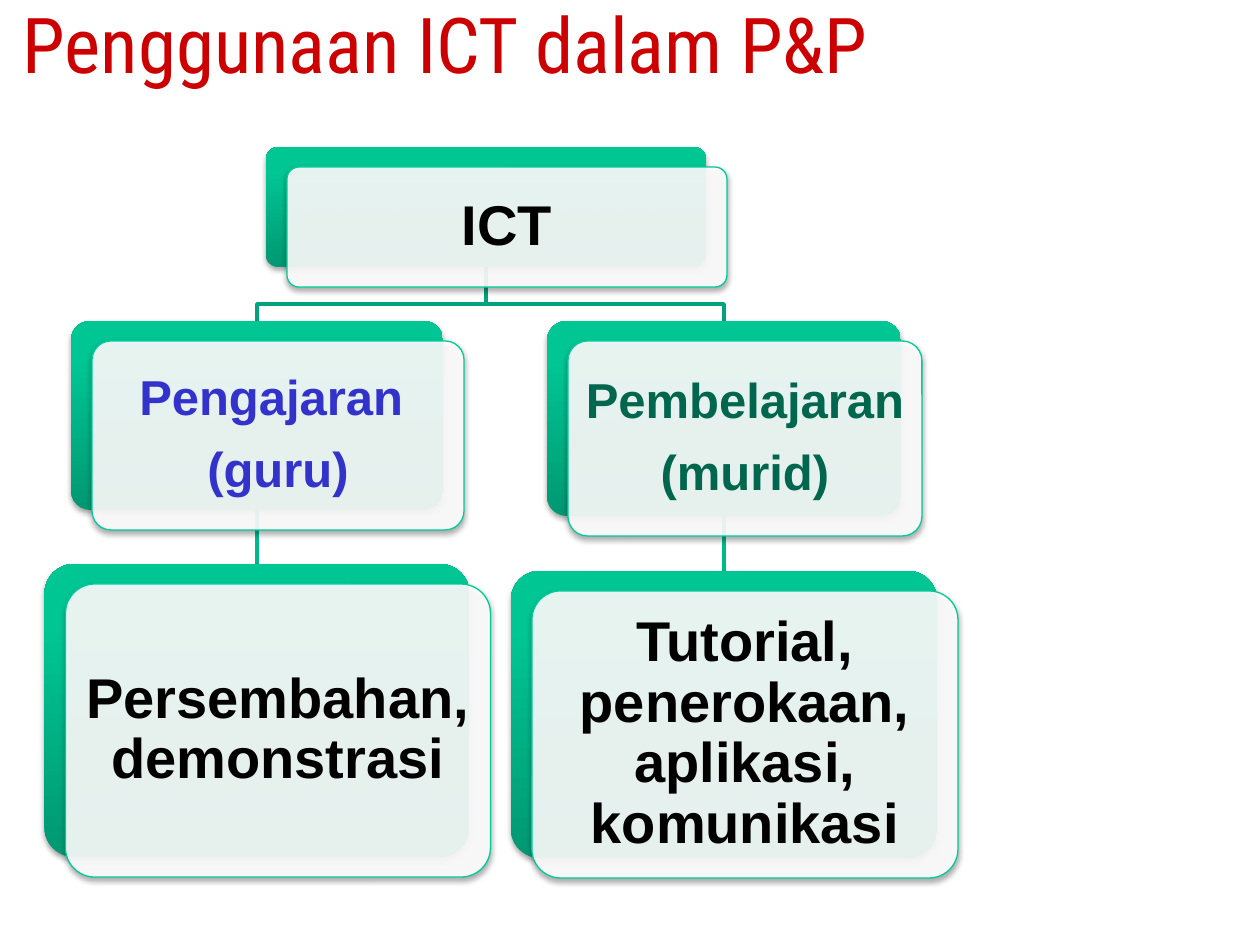
import dataclasses

import pptx
import pptx.dml.color
import pptx.enum.shapes
import pptx.enum.text
import pptx.oxml
import pptx.oxml.ns
import pptx.util

PX = 914400 / 126  # EMU in one px
CARD_SHIFT = (21, 20)  # front card relative to its back card
TOP, BOTTOM = 0, 2  # connection sites of a card


@dataclasses.dataclass(frozen=True)
class Theme:
    title_font: str = "Roboto Condensed"
    body_font: str = "Arial"
    title_size: int = 44
    large: int = 32
    medium: int = 28
    title: str = "CC0000"
    black: str = "000000"
    teacher: str = "3333CC"
    pupil: str = "00664D"
    front: str = "FFFFFF"
    outline: str = "00CC99"
    upper_line: str = "00A37B"
    lower_line: str = "00B98B"
    gradient: tuple = ((0, "009872"), (80, "00C694"), (100, "00C795"))


THEME = Theme()


def px(value):
    return pptx.util.Emu(round(value * PX))


def rgb(code):
    return pptx.dml.color.RGBColor.from_string(code)


def xml(tag, content):
    return pptx.oxml.parse_xml(
        f"<a:{tag} {pptx.oxml.ns.nsdecls('a')}>{content}</a:{tag}>")


def format_run(run, font, size, color, bold=False):
    run.font.name = font
    run.font.size = pptx.util.Pt(size)
    run.font.color.rgb = rgb(color)
    run.font.bold = bold


def set_title(slide, text):
    title = slide.shapes.title
    title.left, title.top, title.width, title.height = map(px, (10, -10, 1092, 105))
    frame = title.text_frame
    frame.text = text
    frame.vertical_anchor = pptx.enum.text.MSO_ANCHOR.MIDDLE
    frame.paragraphs[0].alignment = pptx.enum.text.PP_ALIGN.LEFT
    format_run(frame.paragraphs[0].runs[0], THEME.title_font,
               THEME.title_size, THEME.title)


def add_panel(slide, left, top, width, height):
    """Rounded rectangle with a soft shadow below it."""
    panel = slide.shapes.add_shape(
        pptx.enum.shapes.MSO_SHAPE.ROUNDED_RECTANGLE,
        px(left), px(top), px(width), px(height))
    panel.adjustments[0] = 0.1
    panel.shadow.inherit = False
    effects = panel._element.spPr.find(pptx.oxml.ns.qn("a:effectLst"))
    shadow = xml("outerShdw",
                 '<a:srgbClr val="000000"><a:alpha val="35000"/></a:srgbClr>')
    for name, value in (("blurRad", 40000), ("dist", 23000), ("dir", 5400000),
                        ("rotWithShape", 0)):
        shadow.set(name, str(value))
    effects.append(shadow)
    return panel


def fill_gradient(panel):
    stops = "".join(f'<a:gs pos="{pos * 1000}"><a:srgbClr val="{color}"/></a:gs>'
                    for pos, color in THEME.gradient)
    gradient = xml("gradFill",
                   f'<a:gsLst>{stops}</a:gsLst><a:lin ang="16200000" scaled="0"/>')
    panel.fill.background()
    properties = panel._element.spPr
    properties.replace(properties.find(pptx.oxml.ns.qn("a:noFill")), gradient)


def fill_translucent(panel):
    panel.fill.solid()
    panel.fill.fore_color.rgb = rgb(THEME.front)
    color = panel._element.spPr.find(
        pptx.oxml.ns.qn("a:solidFill")).find(pptx.oxml.ns.qn("a:srgbClr"))
    color.append(pptx.oxml.parse_xml(
        f'<a:alpha {pptx.oxml.ns.nsdecls("a")} val="90000"/>'))


def add_card(slide, center, top, width, height, text, size, color):
    """Gradient back card with a lettered front card; returns the back card."""
    left = center - width / 2
    back = add_panel(slide, left, top, width, height)
    fill_gradient(back)
    back.line.fill.background()

    front = add_panel(slide, left + CARD_SHIFT[0], top + CARD_SHIFT[1], width, height)
    fill_translucent(front)
    front.line.color.rgb = rgb(THEME.outline)
    front.line.width = pptx.util.Pt(0.75)

    frame = front.text_frame
    frame.text = text
    frame.word_wrap = True
    frame.vertical_anchor = pptx.enum.text.MSO_ANCHOR.MIDDLE
    frame.margin_left = frame.margin_right = px(6)
    frame.margin_top = frame.margin_bottom = px(6)
    for paragraph in frame.paragraphs:
        paragraph.alignment = pptx.enum.text.PP_ALIGN.CENTER
        paragraph.line_spacing = 0.9
        paragraph.space_after = pptx.util.Pt(round(size * 0.4))
        format_run(paragraph.runs[0], THEME.body_font, size, color, bold=True)
    return back


def add_branch(slide, start, bend_y, end):
    """Elbow line from the root card down to a child card."""
    builder = slide.shapes.build_freeform(*start, scale=PX)
    builder.add_line_segments(
        [(start[0], bend_y), (end[0], bend_y), end], close=False)
    branch = builder.convert_to_shape()
    branch.fill.background()
    branch.shadow.inherit = False
    branch.line.color.rgb = rgb(THEME.upper_line)
    branch.line.width = pptx.util.Pt(2)


def add_link(slide):
    """Straight line, placed once the cards it joins exist."""
    link = slide.shapes.add_connector(
        pptx.enum.shapes.MSO_CONNECTOR.STRAIGHT, 0, 0, 0, 0)
    link.line.color.rgb = rgb(THEME.lower_line)
    link.line.width = pptx.util.Pt(2)
    link._element.spPr.append(xml("effectLst", ""))
    return link


def main():
    presentation = pptx.Presentation()
    presentation.slide_width = pptx.util.Inches(10)
    presentation.slide_height = pptx.util.Inches(7.5)
    slide = presentation.slides.add_slide(presentation.slide_layouts[5])
    set_title(slide, "Penggunaan ICT dalam P&P")

    root_center, root_top, root_height, role_top = 486, 147, 120, 321
    # Per column: centre, then (top, width, height, text, size, colour) per card
    columns = [
        (257,
         (role_top, 372, 189, "Pengajaran \n(guru)", THEME.medium, THEME.teacher),
         (564, 425, 293, "Persembahan, demonstrasi", THEME.large, THEME.black)),
        (724,
         (role_top, 354, 195, "Pembelajaran\n(murid)", THEME.medium, THEME.pupil),
         (571, 426, 287, "Tutorial, penerokaan, aplikasi, komunikasi",
          THEME.large, THEME.black)),
    ]

    # Lines lie behind the cards
    links = [add_link(slide) for _ in columns]
    for center, *_ in columns:
        add_branch(slide, (root_center, root_top + root_height), 304,
                   (center, role_top))

    # Root card, then each role with its activities
    add_card(slide, root_center, root_top, 440, root_height, "ICT",
             THEME.large, THEME.black)
    for link, (center, role, activities) in zip(links, columns):
        role_card = add_card(slide, center, *role)
        activities_card = add_card(slide, center, *activities)
        link.begin_connect(role_card, BOTTOM)
        link.end_connect(activities_card, TOP)

    presentation.save("out.pptx")


if __name__ == "__main__":
    main()
